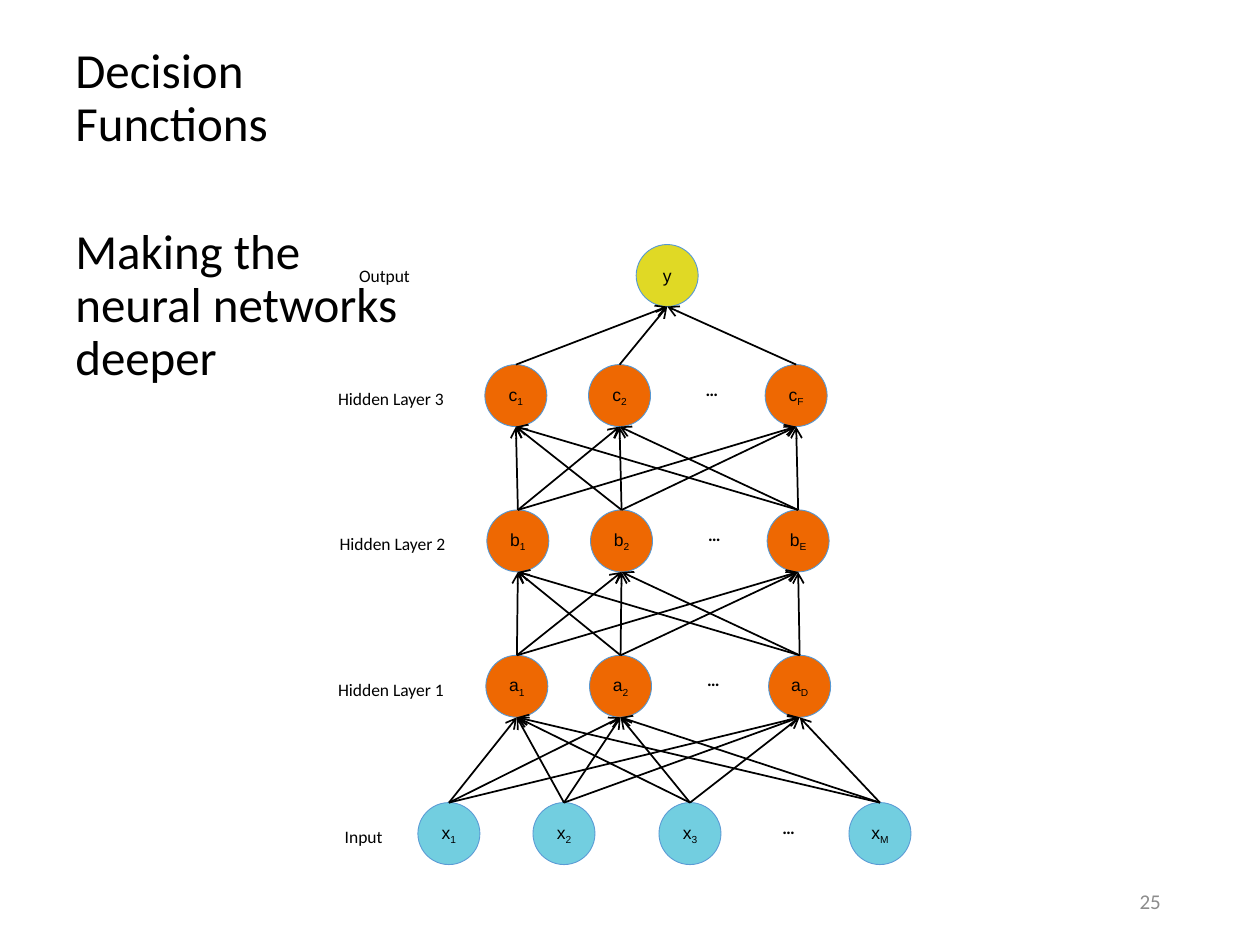
from dataclasses import dataclass
from itertools import pairwise, product

import pptx
import pptx.dml.color
import pptx.enum.shapes
import pptx.enum.text
import pptx.oxml
import pptx.oxml.ns
import pptx.util

Cm = pptx.util.Cm
Pt = pptx.util.Pt
Align = pptx.enum.text.PP_ALIGN
Anchor = pptx.enum.text.MSO_ANCHOR
Kind = pptx.enum.shapes.MSO_SHAPE
Link = pptx.enum.shapes.MSO_CONNECTOR


@dataclass(frozen=True)
class Theme:
    ink: str = "000000"
    gray: str = "8C8C8C"
    input: str = "72CEE0"
    hidden: str = "EE6802"
    output: str = "E0D925"
    rim: str = "5698D3"
    rim_in: str = "5B9BD5"
    body: str = "Calibri"
    math: str = "Arial"
    title: int = 28
    page: int = 12
    small: int = 10


@dataclass(frozen=True)
class Style:
    size: int = Theme.small
    font: str = Theme.body
    color: str = Theme.ink
    align: Align = Align.CENTER
    anchor: Anchor = Anchor.TOP
    bold: bool = False
    wrap: bool = True
    space: float = 1.0


@dataclass(frozen=True)
class Layer:
    """A row of neurons; lengths in cm, mids are the neuron centres."""
    label: str
    left: float
    width: float
    drop: float
    top: float
    sign: str
    subs: tuple[str, ...]
    mids: tuple[float, ...]
    fill: str
    rim: str = Theme.rim
    dots: float | None = None
    align: Align = Align.CENTER


SIDE = 1.25
DOTS_W, DOTS_H = 0.81, 0.69
HEAD = Style(Theme.title, align=Align.LEFT, space=0.9)
TITLE = Style(Theme.title, align=Align.LEFT, anchor=Anchor.MIDDLE, space=0.9)
PAGE = Style(Theme.page, color=Theme.gray, align=Align.RIGHT, anchor=Anchor.MIDDLE)
DOTS = Style(anchor=Anchor.MIDDLE, bold=True, wrap=False)
SIGN = Style(font=Theme.math, anchor=Anchor.MIDDLE, wrap=False)

# Layers from output down to input
LAYERS = (
    Layer("Output", 6.99, 1.96, 0.28, 4.93, "y", ("",), (13.45,),
          Theme.output, align=Align.LEFT),
    Layer("Hidden Layer 3", 6.32, 3.12, 0.35, 7.35, "c", ("1", "2", "F"),
          (10.4, 12.49, 16.05), Theme.hidden, dots=14.35),
    Layer("Hidden Layer 2", 6.35, 3.12, 0.35, 10.28, "b", ("1", "2", "E"),
          (10.44, 12.53, 16.09), Theme.hidden, dots=14.4),
    Layer("Hidden Layer 1", 6.32, 3.12, 0.35, 13.21, "a", ("1", "2", "D"),
          (10.42, 12.51, 16.12), Theme.hidden, dots=14.38),
    Layer("Input", 6.35, 1.96, 0.35, 16.18, "x", ("1", "2", "3", "M"),
          (9.05, 11.37, 13.91, 17.74), Theme.input, Theme.rim_in, 15.9),
)


def paint(code: str) -> pptx.dml.color.RGBColor:
    return pptx.dml.color.RGBColor.from_string(code)


def write(frame: pptx.text.text.TextFrame, text: str, style: Style, sub: str = "") -> None:
    frame.text = text
    frame.word_wrap = style.wrap
    frame.vertical_anchor = style.anchor
    line = frame.paragraphs[0]
    line.alignment = style.align
    line.line_spacing = style.space
    if sub:
        run = line.add_run()
        run.text = sub
        run._r.get_or_add_rPr().set("baseline", "-25000")
    for run in line.runs:
        run.font.size = Pt(style.size)
        run.font.name = style.font
        run.font.bold = style.bold
        run.font.color.rgb = paint(style.color)


def add_text(slide: pptx.slide.Slide, text: str, left: float, top: float,
             width: float, height: float, style: Style) -> None:
    box = slide.shapes.add_textbox(Cm(left), Cm(top), Cm(width), Cm(height))
    write(box.text_frame, text, style)


def add_node(slide: pptx.slide.Slide, layer: Layer, sub: str,
             mid: float) -> pptx.shapes.autoshape.Shape:
    node = slide.shapes.add_shape(Kind.FLOWCHART_CONNECTOR, Cm(mid - SIDE / 2),
                                  Cm(layer.top), Cm(SIDE), Cm(SIDE))
    node.shadow.inherit = False
    node.fill.solid()
    node.fill.fore_color.rgb = paint(layer.fill)
    node.line.color.rgb = paint(layer.rim)
    node.line.width = Pt(0.5)
    frame = node.text_frame
    frame.margin_left = frame.margin_right = frame.margin_top = frame.margin_bottom = 0
    write(frame, layer.sign, SIGN, sub)
    return node


def add_layer(slide: pptx.slide.Slide, layer: Layer) -> list[pptx.shapes.autoshape.Shape]:
    add_text(slide, layer.label, layer.left, layer.top + layer.drop,
             layer.width, DOTS_H, Style(align=layer.align))
    if layer.dots is not None:
        add_text(slide, "…", layer.dots - DOTS_W / 2, layer.top + 0.15,
                 DOTS_W, DOTS_H, DOTS)
    return [add_node(slide, layer, sub, mid)
            for sub, mid in zip(layer.subs, layer.mids)]


def add_arrow(slide: pptx.slide.Slide, high: pptx.shapes.autoshape.Shape,
              low: pptx.shapes.autoshape.Shape) -> None:
    """Point from the top of the low neuron to the foot of the high one."""
    arrow = slide.shapes.add_connector(
        Link.STRAIGHT, high.left + high.width // 2, high.top + high.height,
        low.left + low.width // 2, low.top)
    arrow.end_connect(low, 0)
    arrow.line.color.rgb = paint(Theme.ink)
    arrow.line.width = Pt(1)
    head = pptx.oxml.parse_xml(
        f'<a:headEnd {pptx.oxml.ns.nsdecls("a")} type="arrow"/>')
    arrow.line._get_or_add_ln().append(head)
    arrow._element.spPr.append(pptx.oxml.parse_xml(
        f'<a:effectLst {pptx.oxml.ns.nsdecls("a")}/>'))


def main() -> None:
    deck = pptx.Presentation()
    deck.slide_width, deck.slide_height = Cm(25.4), Cm(19.05)
    slide = deck.slides.add_slide(deck.slide_layouts[6])

    # Headings and page number
    add_text(slide, "Making the neural networks deeper", 1.27, 4.45, 7.16, 12.57, HEAD)
    add_text(slide, "Decision Functions", 1.27, 0.41, 7.42, 3.18, TITLE)
    add_text(slide, "25", 17.93, 17.65, 5.72, 1.02, PAGE)

    # Network: neurons, then arrows between neighbouring layers
    rows = [add_layer(slide, layer) for layer in LAYERS]
    for upper, lower in pairwise(rows):
        for high, low in product(upper, lower):
            add_arrow(slide, high, low)

    deck.save("out.pptx")


if __name__ == "__main__":
    main()
